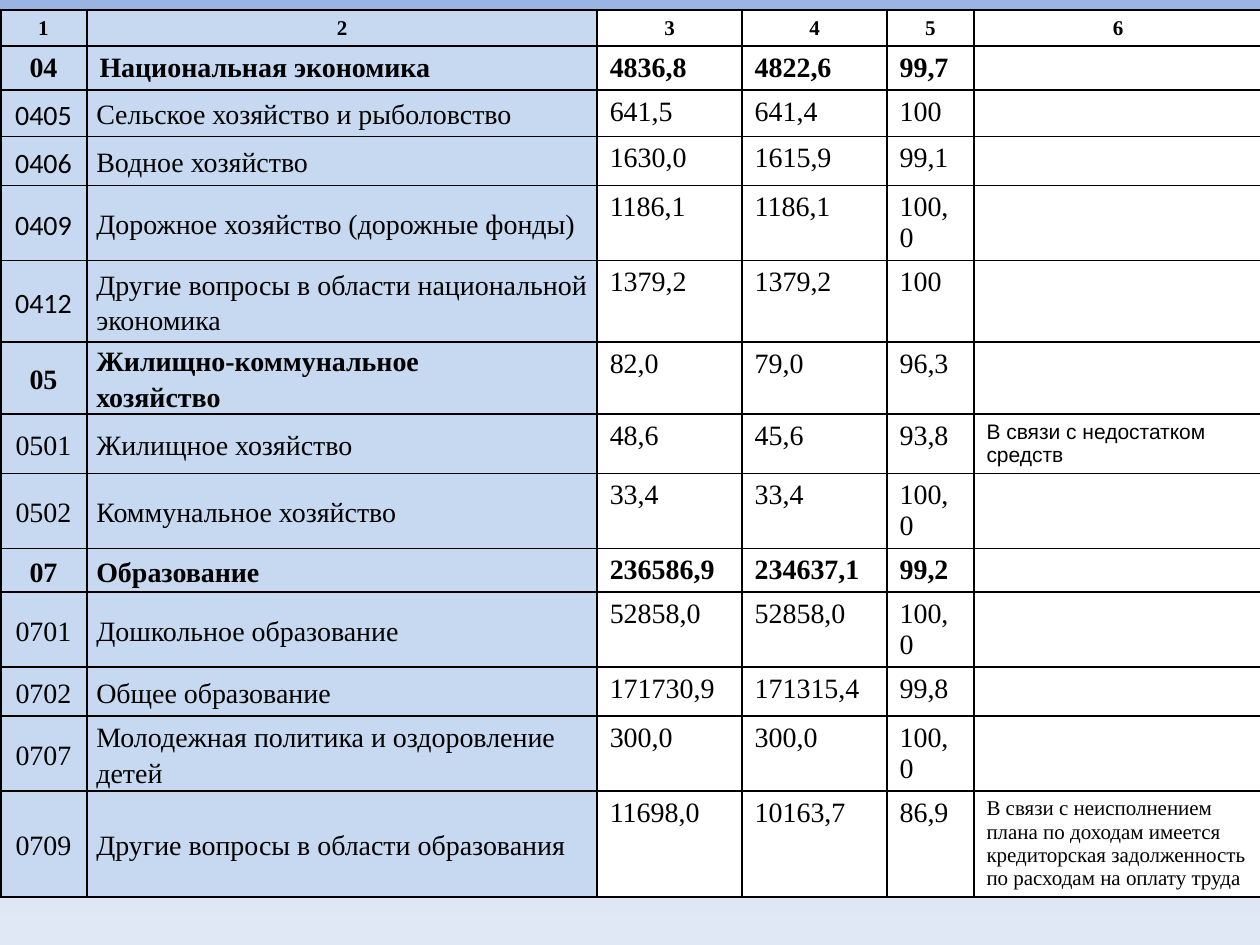
from copy import deepcopy
from dataclasses import dataclass

from lxml.etree import SubElement
from pptx import Presentation
from pptx.dml.color import RGBColor as Color
from pptx.enum.text import MSO_ANCHOR as Anchor, PP_ALIGN as Align
from pptx.oxml.ns import qn
from pptx.util import Pt


@dataclass(frozen=True)
class Theme:
    ink: str = "000000"
    label_fill: str = "C6D9F1"
    value_fill: str = "FFFFFF"
    backdrop: tuple = ((0, "9AB5E4"), (0.5, "C2D1ED"), (1, "E1E8F5"))
    serif: str = "Times New Roman"
    code_font: str = "Calibri"
    note_font: str = "Arial"
    body: float = 16
    small: float = 12
    thin: float = 1
    thick: float = 2.25


THEME = Theme()
COLUMN_WIDTHS = (49.68, 291.6, 82.8, 82.8, 49.68, 164.88)
ROW_HEIGHTS = (18.72, 19.44, 26.64, 28.08, 22.32, 46.8, 38.16,
               21.6, 29.52, 24.48, 28.08, 28.08, 39.6, 39.6)
HEADER = ("1", "2", "3", "4", "5", "6")
# Code, section name, plan, actual, percent, reason
BUDGET = (
    ("04", "Национальная экономика", "4836,8", "4822,6", "99,7", ""),
    ("0405", "Сельское хозяйство и рыболовство", "641,5", "641,4", "100", ""),
    ("0406", "Водное хозяйство", "1630,0", "1615,9", "99,1", ""),
    ("0409", "Дорожное хозяйство (дорожные фонды)", "1186,1", "1186,1", "100,0", ""),
    ("0412", "Другие вопросы в области национальной экономика",
     "1379,2", "1379,2", "100", ""),
    ("05", "Жилищно-коммунальное\nхозяйство", "82,0", "79,0", "96,3", ""),
    ("0501", "Жилищное хозяйство", "48,6", "45,6", "93,8",
     "В связи с недостатком средств"),
    ("0502", "Коммунальное хозяйство", "33,4", "33,4", "100,0", ""),
    ("07", "Образование", "236586,9", "234637,1", "99,2", ""),
    ("0701", "Дошкольное образование", "52858,0", "52858,0", "100,0", ""),
    ("0702", "Общее образование", "171730,9", "171315,4", "99,8", ""),
    ("0707", "Молодежная политика и оздоровление детей",
     "300,0", "300,0", "100,0", ""),
    ("0709", "Другие вопросы в области образования", "11698,0", "10163,7", "86,9",
     "В связи с неисполнением плана по доходам имеется кредиторская "
     "задолженность по расходам на оплату труда"),
)


def paint_backdrop(page):
    fill = page.background.fill
    fill.gradient()
    fill.gradient_angle = 270
    # A new gradient has two stops; the middle one is a copy of the first
    first = fill.gradient_stops[0]._gs
    first.addnext(deepcopy(first))
    for stop, (position, color) in zip(fill.gradient_stops, THEME.backdrop):
        stop.position = position
        stop.color.rgb = Color.from_string(color)


def draw_borders(cell, column):
    widths = {"L": THEME.thick if column == 0 else THEME.thin,
              "R": THEME.thick if column == len(HEADER) - 1 else THEME.thin,
              "T": THEME.thin, "B": THEME.thin}
    properties = cell._tc.get_or_add_tcPr()
    for side, width in widths.items():
        line = SubElement(properties, qn(f"a:ln{side}"), w=str(Pt(width)))
        solid = SubElement(line, qn("a:solidFill"))
        SubElement(solid, qn("a:srgbClr"), val=THEME.ink)


def set_percent_space_before(para, percent):
    space = SubElement(para._p.get_or_add_pPr(), qn("a:spcBef"))
    SubElement(space, qn("a:spcPct"), val=str(percent * 1000))


def write_cell(cell, text, font, size, bold, centred, is_label, space_after):
    frame = cell.text_frame
    if is_label:
        cell.vertical_anchor = Anchor.MIDDLE
        cell.margin_left = cell.margin_right = Pt(5.4)
        cell.margin_top = cell.margin_bottom = Pt(0)
    for index, words in enumerate(text.split("\n")):
        para = frame.add_paragraph() if index else frame.paragraphs[0]
        if centred:
            para.alignment = Align.CENTER
        if is_label:
            para.line_spacing = 1.15
            if space_after:
                para.space_after = Pt(space_after)
        else:
            set_percent_space_before(para, 20)
        if not words:
            # An empty cell keeps the body size, so its row stays low
            end = SubElement(para._p, qn("a:endParaRPr"), sz=str(Pt(size).centipoints))
            SubElement(end, qn("a:latin"), typeface=font)
            continue
        span = para.add_run()
        span.text = words
        span.font.name = font
        span.font.size = Pt(size)
        span.font.bold = bold
        span.font.color.rgb = Color.from_string(THEME.ink)


def cell_style(row, column, code):
    is_header = row == 0
    is_label = row > 1 and column < 2
    font, size = THEME.serif, THEME.body
    if column == 0 and code in ("0405", "0406", "0409", "0412"):
        font = THEME.code_font
    if column == 5 and code == "0501":
        font = THEME.note_font
    if is_header or (column == 5 and code in ("0501", "0709")):
        size = THEME.small
    bold = is_header or code in ("04", "07") or (code == "05" and is_label)
    return dict(font=font, size=size, bold=bold, is_label=is_label,
                centred=is_header or column == 0,
                space_after=10 if column == 1 and code >= "0501" else 0)


def add_budget_table(page, left, top, width, height):
    rows = (HEADER,) + BUDGET
    holder = page.shapes.add_table(len(rows), len(HEADER),
                                   Pt(left), Pt(top), Pt(width), Pt(height))
    table = holder.table
    table.first_row = table.horz_banding = False
    for column, column_width in zip(table.columns, COLUMN_WIDTHS):
        column.width = Pt(column_width)
    for row, row_height in zip(table.rows, ROW_HEIGHTS):
        row.height = Pt(row_height)
    holder.width, holder.height = Pt(width), Pt(height)

    for r, values in enumerate(rows):
        for c, text in enumerate(values):
            cell = table.cell(r, c)
            draw_borders(cell, c)
            cell.fill.solid()
            cell.fill.fore_color.rgb = Color.from_string(
                THEME.label_fill if c < 2 else THEME.value_fill)
            code = values[0] if r else ""
            write_cell(cell, text, **cell_style(r, c, code))


def main():
    deck = Presentation()
    deck.slide_width, deck.slide_height = Pt(720), Pt(540)
    page = deck.slides.add_slide(deck.slide_layouts[6])
    paint_backdrop(page)
    add_budget_table(page, 0, 5.76, 720, 531.36)
    deck.save("out.pptx")


if __name__ == "__main__":
    main()
